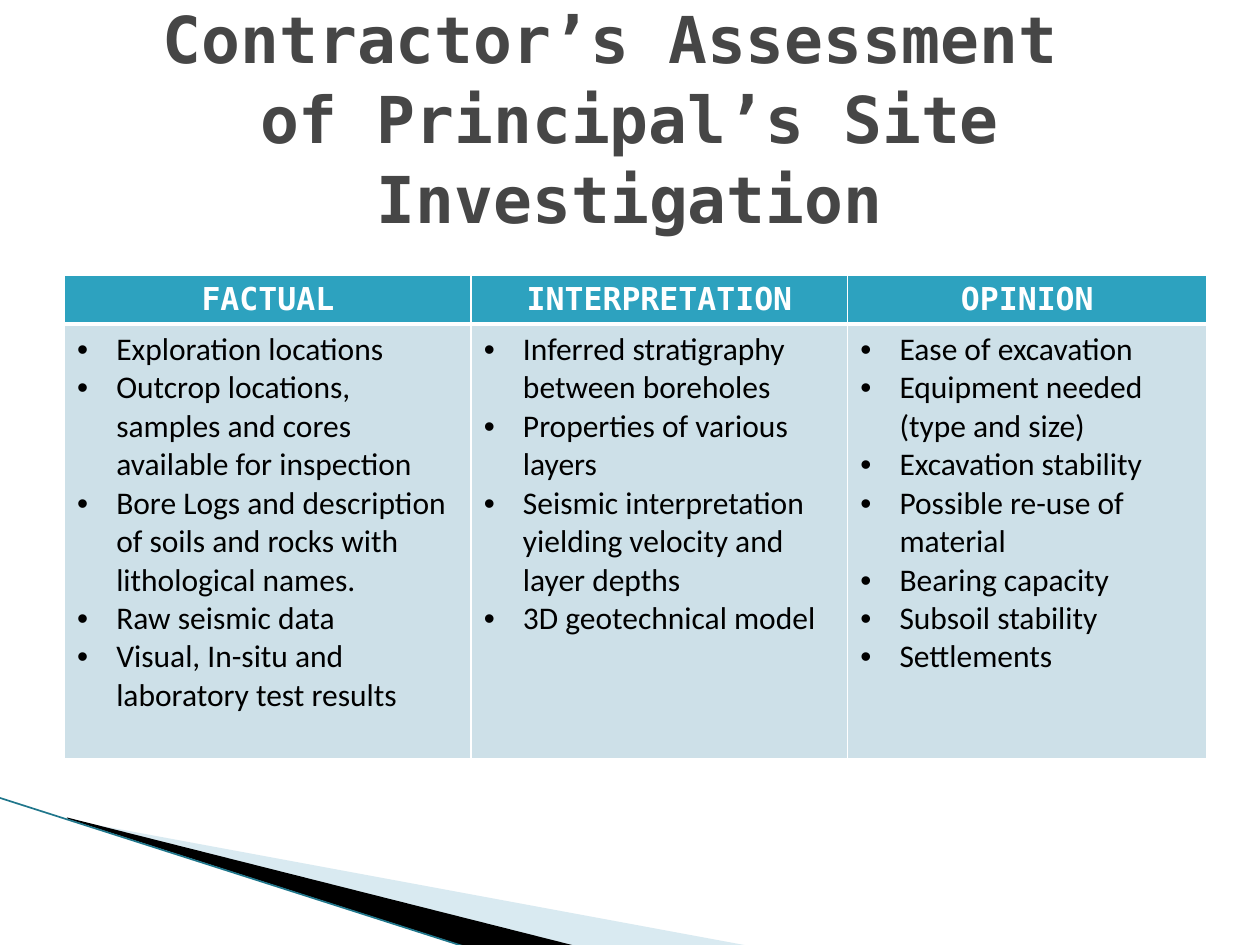
from lxml import etree
from pptx import Presentation
from pptx.dml.color import RGBColor
from pptx.enum.shapes import MSO_CONNECTOR
from pptx.enum.text import MSO_ANCHOR, PP_ALIGN
from pptx.oxml.ns import qn
from pptx.util import Cm, Pt

STRAIGHT = MSO_CONNECTOR.STRAIGHT
CENTER = PP_ALIGN.CENTER
MIDDLE = MSO_ANCHOR.MIDDLE

WHITE = RGBColor(0xFF, 0xFF, 0xFF)
BLACK = RGBColor(0x00, 0x00, 0x00)
TITLE_GREY = RGBColor(0x46, 0x46, 0x46)
HEADER_TEAL = RGBColor(0x2D, 0xA2, 0xBF)
BODY_BLUE = RGBColor(0xCD, 0xE0, 0xE8)
WEDGE_BLUE = RGBColor(0xA0, 0xCB, 0xDC)
LINE_TEAL = RGBColor(0x1F, 0x76, 0x8B)

HEADING_FONT = "DejaVu Sans Mono"
BODY_FONT = "Calibri"

COLUMNS = [
    ("FACTUAL", 8.2, [
        "Exploration locations",
        "Outcrop locations, samples and cores available for inspection",
        "Bore Logs and description of soils and rocks with lithological names.",
        "Raw seismic data",
        "Visual, In-situ and laboratory test results",
    ]),
    ("INTERPRETATION", 7.59, [
        "Inferred stratigraphy between boreholes",
        "Properties of various layers",
        "Seismic interpretation yielding velocity and layer depths",
        "3D geotechnical model",
    ]),
    ("OPINION", 7.24, [
        "Ease of excavation",
        "Equipment needed (type and size)",
        "Excavation stability",
        "Possible re-use of material",
        "Bearing capacity",
        "Subsoil stability",
        "Settlements",
    ]),
]


def style_cell(cell, color, top, bottom):
    """Fill the cell and give it white borders; top and bottom are widths in points."""
    cell.fill.solid()
    cell.fill.fore_color.rgb = color
    properties = cell._tc.get_or_add_tcPr()
    borders = [("a:lnL", 1), ("a:lnR", 1), ("a:lnT", top), ("a:lnB", bottom)]
    for index, (tag, width) in enumerate(borders):
        border = etree.Element(qn(tag), w=str(Pt(width)))
        fill = etree.SubElement(border, qn("a:solidFill"))
        etree.SubElement(fill, qn("a:srgbClr"), val=str(WHITE))
        properties.insert(index, border)


def set_font(paragraph, name, size, color, bold):
    paragraph.font.name = name
    paragraph.font.size = Pt(size)
    paragraph.font.color.rgb = color
    paragraph.font.bold = bold


presentation = Presentation()
presentation.slide_width = Cm(25.4)
presentation.slide_height = Cm(19.05)
slide = presentation.slides.add_slide(presentation.slide_layouts[6])

# Corner decoration
wedges = [
    (WEDGE_BLUE, 40, [(1.4, 16.53), (15.11, 19.07), (11.58, 19.07), (1.4, 16.51)]),
    (BLACK, 100, [(1.35, 16.48), (11.61, 19.07), (9.45, 19.1), (1.37, 16.51)]),
]
for color, opacity, corners in wedges:
    points = [(Cm(x), Cm(y)) for x, y in corners]
    builder = slide.shapes.build_freeform(*points[0])
    builder.add_line_segments(points[1:])
    wedge = builder.convert_to_shape()
    wedge.shadow.inherit = False
    wedge.fill.solid()
    wedge.fill.fore_color.rgb = color
    wedge.line.fill.background()
    if opacity < 100:
        color_element = wedge._element.spPr.find(".//" + qn("a:srgbClr"))
        etree.SubElement(color_element, qn("a:alpha"), val=str(opacity * 1000))

edge = slide.shapes.add_connector(STRAIGHT, Cm(-0.02), Cm(16.08), Cm(9.42), Cm(19.1))
edge.line.color.rgb = LINE_TEAL
edge.line.width = Pt(0.95)
etree.SubElement(edge._element.spPr, qn("a:effectLst"))

# Assessment table
table_width = sum(width for _, width, _ in COLUMNS)
table_frame = slide.shapes.add_table(
    2, len(COLUMNS), Cm(1.3), Cm(5.54), Cm(table_width), Cm(9.74))
table = table_frame.table
table.rows[0].height = Cm(0.98)
table.rows[1].height = Cm(8.76)

for index, (heading, width, items) in enumerate(COLUMNS):
    table.columns[index].width = Cm(width)

    header = table.cell(0, index)
    style_cell(header, HEADER_TEAL, 1, 3)
    header.text = heading
    paragraph = header.text_frame.paragraphs[0]
    paragraph.alignment = CENTER
    set_font(paragraph, HEADING_FONT, 18, WHITE, True)

    body = table.cell(1, index)
    style_cell(body, BODY_BLUE, 3, 1)
    body.text = "\n".join(items)
    for paragraph in body.text_frame.paragraphs:
        properties = paragraph._p.get_or_add_pPr()
        properties.set("marL", str(Cm(0.79)))
        properties.set("indent", str(Cm(-0.79)))
        etree.SubElement(properties, qn("a:buFont"), typeface="Arial")
        etree.SubElement(properties, qn("a:buChar"), char="•")
        set_font(paragraph, BODY_FONT, 18, BLACK, False)

# Title
title = slide.shapes.add_textbox(Cm(1.27), Cm(0.76), Cm(22.86), Cm(3.18))
title_frame = title.text_frame
title_frame.word_wrap = True
title_frame.vertical_anchor = MIDDLE
paragraph = title_frame.paragraphs[0]
paragraph.text = "Contractor’s Assessment \vof Principal’s Site Investigation"
paragraph.alignment = CENTER
paragraph.line_spacing = 1.03
set_font(paragraph, HEADING_FONT, 36.9, TITLE_GREY, True)

presentation.save("out.pptx")
